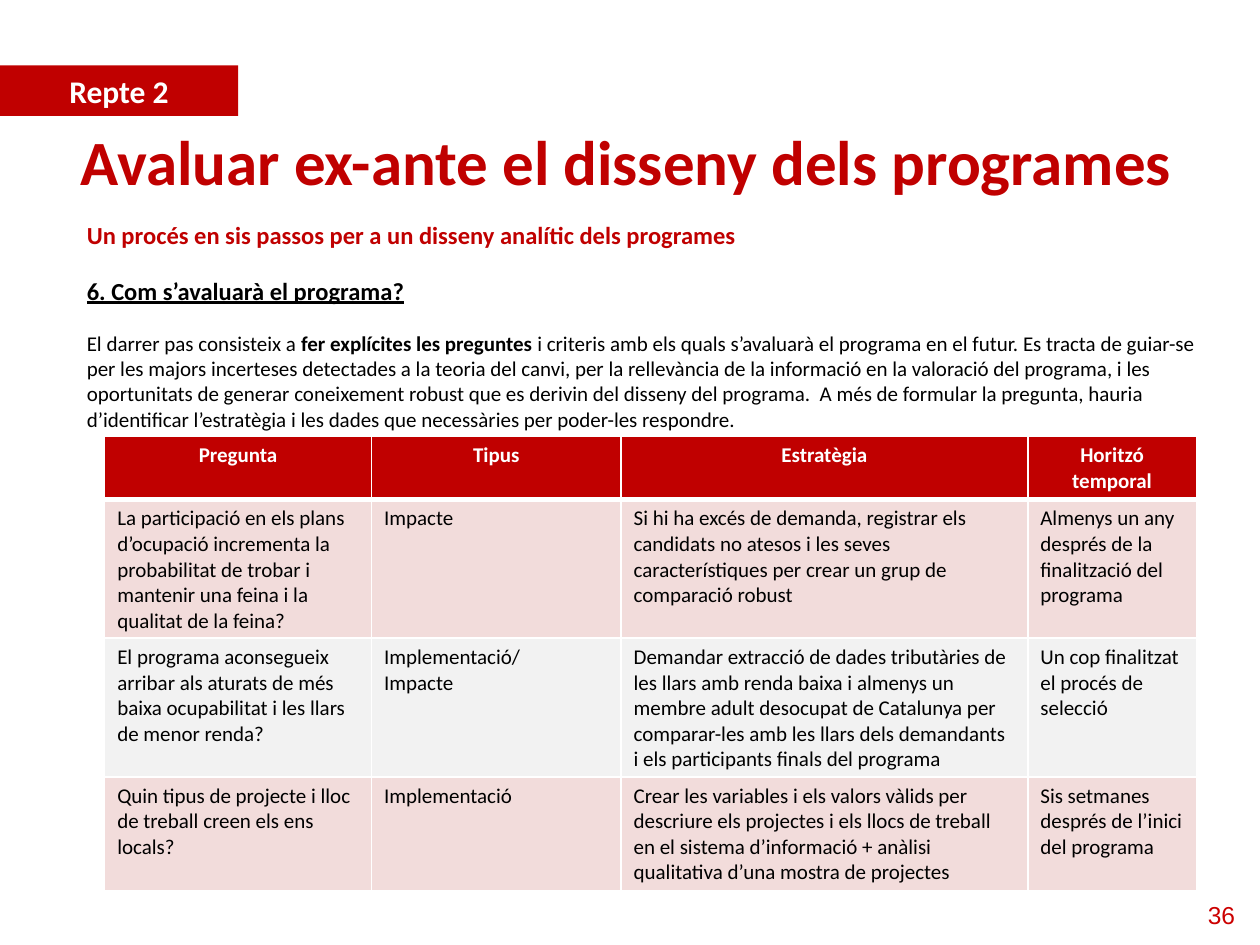
from dataclasses import dataclass
from typing import Any

from lxml.etree import SubElement
from pptx import Presentation
from pptx.dml.color import RGBColor as RGB
from pptx.enum.shapes import MSO_SHAPE as Shape
from pptx.enum.text import MSO_ANCHOR as Anchor, PP_ALIGN as Align
from pptx.oxml.ns import qn
from pptx.util import Cm, Pt


@dataclass(frozen=True)
class Theme:
    font: str = "Calibri"
    number_font: str = "Arial"
    red: str = "C00000"
    number_red: str = "CC0000"
    white: str = "FFFFFF"
    black: str = "000000"
    pink: str = "F2DCDB"
    grey: str = "F2F2F2"
    title: int = 36
    tag: int = 18
    heading: int = 14
    body: int = 12
    gap: float = 14.65
    border: int = 1
    header_border: int = 3


T = Theme()


@dataclass(frozen=True)
class Box:
    left: float
    top: float
    width: float
    height: float

    def cm(self) -> tuple:
        return Cm(self.left), Cm(self.top), Cm(self.width), Cm(self.height)


@dataclass(frozen=True)
class Run:
    text: str
    size: int = T.body
    color: str = T.black
    bold: bool = False
    underline: bool = False
    font: str = T.font


@dataclass(frozen=True)
class Para:
    runs: tuple[Run, ...]
    align: Any = Align.LEFT
    before: float = 0


@dataclass(frozen=True)
class Row:
    height: float
    fill: str
    cells: tuple[str, ...]


def apply(obj: Any, values: dict[str, Any]) -> None:
    for name, value in values.items():
        setattr(obj, name, value)


def write(tf: Any, paras: list[Para]) -> None:
    for i, para in enumerate(paras):
        p = tf.add_paragraph() if i else tf.paragraphs[0]
        p.alignment = para.align
        if para.before:
            p.space_before = Pt(para.before)
        for run in para.runs:
            r = p.add_run()
            r.text = run.text
            apply(r.font, {"name": run.font, "size": Pt(run.size),
                           "bold": run.bold, "underline": run.underline})
            r.font.color.rgb = RGB.from_string(run.color)


def add_text(s: Any, box: Box, paras: list[Para], anchor: Any = Anchor.TOP) -> None:
    tf = s.shapes.add_textbox(*box.cm()).text_frame
    apply(tf, {"word_wrap": True, "vertical_anchor": anchor})
    write(tf, paras)


def add_tag(s: Any, box: Box, para: Para) -> None:
    sp = s.shapes.add_shape(Shape.RECTANGLE, *box.cm())
    sp.shadow.inherit = False
    sp.fill.solid()
    sp.fill.fore_color.rgb = RGB.from_string(T.red)
    sp.line.fill.background()
    write(sp.text_frame, [para])


def set_borders(cell: Any, widths: dict[str, int]) -> None:
    tc_pr = cell._tc.get_or_add_tcPr()
    for i, (side, width) in enumerate(widths.items()):
        ln = SubElement(tc_pr, qn(f"a:ln{side}"), w=str(Pt(width)))
        fill = SubElement(ln, qn("a:solidFill"))
        SubElement(fill, qn("a:srgbClr"), val=T.white)
        tc_pr.insert(i, ln)


def add_grid(s: Any, box: Box, widths: list[float], rows: list[Row]) -> None:
    table = s.shapes.add_table(len(rows), len(widths), *box.cm()).table
    for col, width in zip(table.columns, widths):
        col.width = Cm(width)
    for i, row in enumerate(rows):
        table.rows[i].height = Cm(row.height)
        header = i == 0
        color, align = (T.white, Align.CENTER) if header else (T.black, Align.LEFT)
        borders = {"L": T.border, "R": T.border,
                   "T": T.header_border if i == 1 else T.border,
                   "B": T.header_border if header else T.border}
        for j, text in enumerate(row.cells):
            cell = table.cell(i, j)
            cell.fill.solid()
            cell.fill.fore_color.rgb = RGB.from_string(row.fill)
            set_borders(cell, borders)
            write(cell.text_frame, [Para((Run(line, color=color, bold=header),), align)
                                    for line in text.split("\n")])


INTRO = [
    Para((Run("Un procés en sis passos per a un disseny analític dels programes",
              T.heading, T.red, True),)),
    Para((Run("6. Com s’avaluarà el programa?", T.heading, bold=True, underline=True),),
         before=T.gap),
    Para((Run("El darrer pas consisteix a "),
          Run("fer explícites les preguntes ", bold=True),
          Run("i criteris amb els quals s’avaluarà el programa en el futur. Es tracta de "
              "guiar-se per les majors incerteses detectades a la teoria del canvi, per la "
              "rellevància de la informació en la valoració del programa, i les oportunitats "
              "de generar coneixement robust que es derivin del disseny del programa.  A més "
              "de formular la pregunta, hauria d’identificar l’estratègia i les dades que "
              "necessàries per poder-les respondre.")), before=T.gap),
]

ROWS = [
    Row(1.25, T.red, ("Pregunta", "Tipus", "Estratègia", "Horitzó temporal")),
    Row(2.79, T.pink, (
        "La participació en els plans d’ocupació incrementa la probabilitat de trobar i "
        "mantenir una feina i la qualitat de la feina?",
        "Impacte",
        "Si hi ha excés de demanda, registrar els candidats no atesos i les seves "
        "característiques per crear un grup de comparació robust",
        "Almenys un any després de la finalització del programa")),
    Row(2.79, T.grey, (
        "El programa aconsegueix arribar als aturats de més baixa ocupabilitat i les llars "
        "de menor renda?",
        "Implementació/\nImpacte",
        "Demandar extracció de dades tributàries de les llars amb renda baixa i almenys un "
        "membre adult desocupat de Catalunya per comparar-les amb les llars dels demandants "
        "i els participants finals del programa",
        "Un cop finalitzat el procés de selecció")),
    Row(2.28, T.pink, (
        "Quin tipus de projecte i lloc de treball creen els ens locals?",
        "Implementació",
        "Crear les variables i els valors vàlids per descriure els projectes i els llocs de "
        "treball en el sistema d’informació + anàlisi qualitativa d’una mostra de projectes",
        "Sis setmanes després de l’inici del programa")),
]


def main() -> None:
    prs = Presentation()
    apply(prs, {"slide_width": Cm(25.4), "slide_height": Cm(19.05)})
    s = prs.slides.add_slide(prs.slide_layouts[6])
    add_text(s, Box(24.1, 18.01, 1.3, 0.86),
             [Para((Run("36", T.heading, T.number_red, font=T.number_font),))])
    add_text(s, Box(1.5, 4.32, 23.24, 4.4), INTRO)
    add_text(s, Box(0, 2.34, 25.25, 1.8),
             [Para((Run("Avaluar ex-ante el disseny dels programes", T.title, T.red, True),),
                   Align.CENTER)], Anchor.MIDDLE)
    add_grid(s, Box(2.11, 8.8, 22, 9.11), [5.38, 5.03, 8.2, 3.4], ROWS)
    add_tag(s, Box(0, 1.32, 4.8, 1.02),
            Para((Run("Repte 2", T.tag, T.white, True),), Align.CENTER))
    prs.save("out.pptx")


if __name__ == "__main__":
    main()
